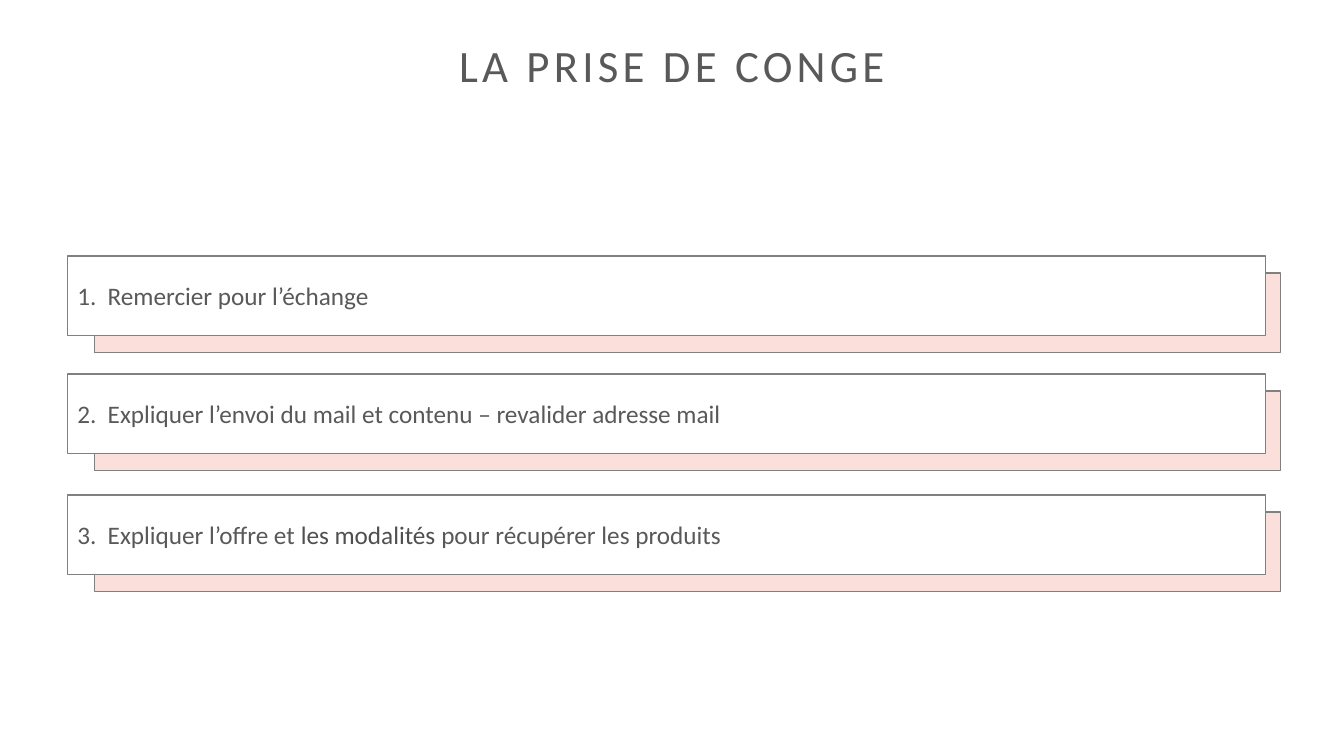
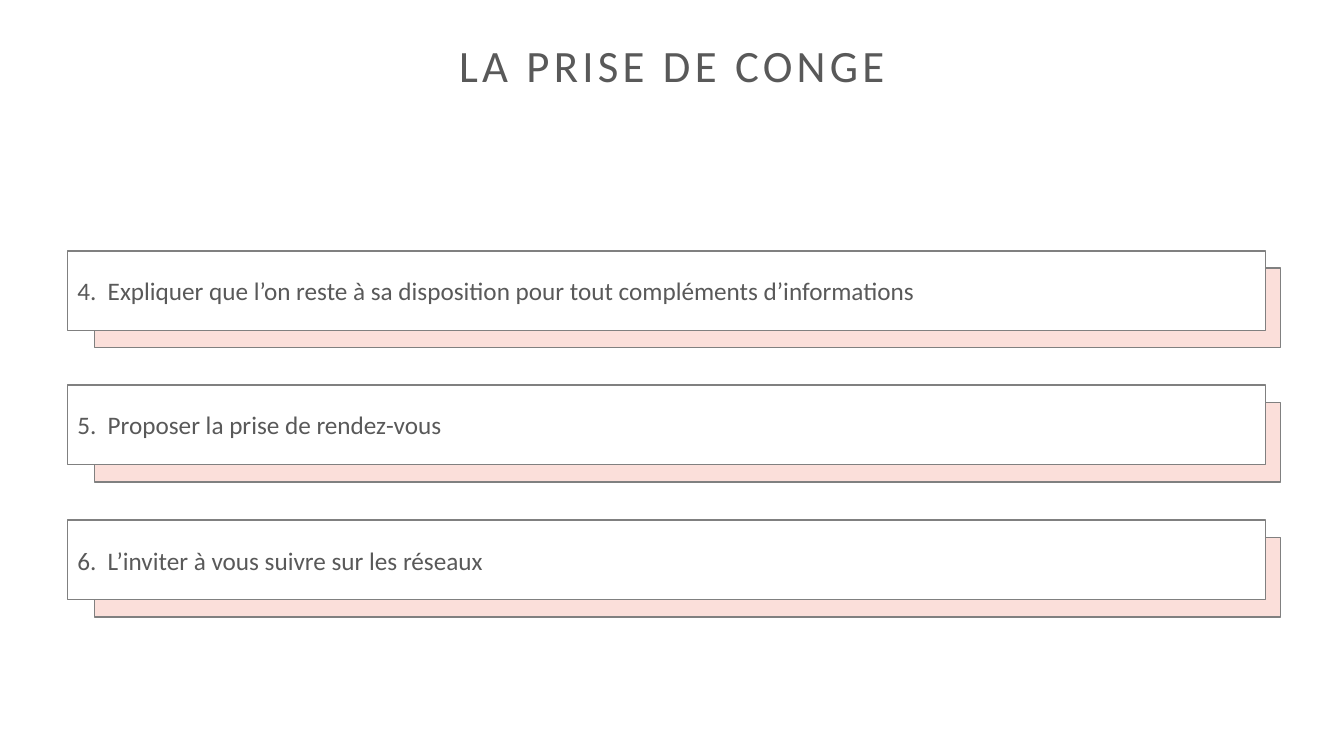
"""Build the two leave-taking slides as numbered step cards."""
from dataclasses import dataclass

from lxml.etree import SubElement
from pptx import Presentation
from pptx.dml.color import RGBColor
from pptx.enum.shapes import MSO_SHAPE as Shape
from pptx.enum.text import MSO_ANCHOR as Anchor, PP_ALIGN as Align
from pptx.oxml.ns import qn
from pptx.shapes.autoshape import Shape as AutoShape
from pptx.shapes.group import GroupShape
from pptx.slide import Slide
from pptx.text.text import _Run as Run
from pptx.util import Inches, Pt

FONT = "Calibri"
TEXT, ACCENT, BORDER = "595959", "4F4E51", "808080"
WHITE, PINK = "FFFFFF", "FBDFDA"
TITLE = "LA PRISE DE CONGE"
SLIDE_W, SLIDE_H = 13.33, 7.5
CARD_X, CARD_W, CARD_H = 0.67, 11.88, 0.79
BACK_X, BACK_W, BACK_DROP = 0.94, 11.76, 0.17
NUMBER_INDENT = 0.3


@dataclass(frozen=True)
class Step:
    number: int
    top: float
    phrases: tuple[tuple[str, str], ...]


SLIDES = (
    (
        Step(1, 2.54, (("Remercier pour l’échange", TEXT),)),
        Step(2, 3.71, (("Expliquer l’envoi du mail et contenu – revalider adresse mail", TEXT),)),
        Step(3, 4.91, (
            ("Expliquer l’offre et ", TEXT),
            ("les modalités ", ACCENT),
            ("pour récupérer les produits", TEXT),
        )),
    ),
    (
        Step(4, 2.49, (("Expliquer que l’on reste à sa disposition pour tout compléments d’informations", TEXT),)),
        Step(5, 3.82, (("Proposer la prise de rendez-vous", TEXT),)),
        Step(6, 5.16, (("L’inviter à vous suivre sur les réseaux", TEXT),)),
    ),
)


def rgb(color: str) -> RGBColor:
    return RGBColor.from_string(color)


def style_run(r: Run, size: float, color: str) -> None:
    r.font.name = FONT
    r.font.size = Pt(size)
    r.font.color.rgb = rgb(color)


def add_title(slide: Slide) -> None:
    sp = slide.shapes.add_textbox(Inches(0), Inches(0.32), Inches(SLIDE_W), Inches(1.18))
    tf = sp.text_frame
    tf.word_wrap = True
    p = tf.paragraphs[0]
    p.text = TITLE
    p.alignment = Align.CENTER
    r = p.runs[0]
    style_run(r, 32, TEXT)
    r._r.get_or_add_rPr().set("spc", "300")


def add_box(group: GroupShape, x: float, y: float, w: float, fill: str) -> AutoShape:
    sp = group.shapes.add_shape(
        Shape.FLOWCHART_PROCESS, Inches(x), Inches(y), Inches(w), Inches(CARD_H))
    sp.shadow.inherit = False
    sp.fill.solid()
    sp.fill.fore_color.rgb = rgb(fill)
    sp.line.color.rgb = rgb(BORDER)
    sp.line.width = Pt(1)
    return sp


def add_step(slide: Slide, step: Step) -> None:
    group = slide.shapes.add_group_shape()
    add_box(group, BACK_X, step.top + BACK_DROP, BACK_W, PINK)
    tf = add_box(group, CARD_X, step.top, CARD_W, WHITE).text_frame
    tf.word_wrap = True
    tf.vertical_anchor = Anchor.MIDDLE
    p = tf.paragraphs[0]
    p.alignment = Align.LEFT
    props = p._p.get_or_add_pPr()
    props.set("marL", str(Inches(NUMBER_INDENT)))
    props.set("indent", str(-Inches(NUMBER_INDENT)))
    SubElement(props, qn("a:buFont"), typeface=FONT)
    SubElement(props, qn("a:buAutoNum"), type="arabicPeriod", startAt=str(step.number))
    for text, color in step.phrases:
        r = p.add_run()
        r.text = text
        style_run(r, 18, color)


def main() -> None:
    prs = Presentation()
    prs.slide_width, prs.slide_height = Inches(SLIDE_W), Inches(SLIDE_H)
    for steps in SLIDES:
        slide = prs.slides.add_slide(prs.slide_layouts[6])
        add_title(slide)
        for step in steps:
            add_step(slide, step)
    prs.save("out.pptx")


if __name__ == "__main__":
    main()
